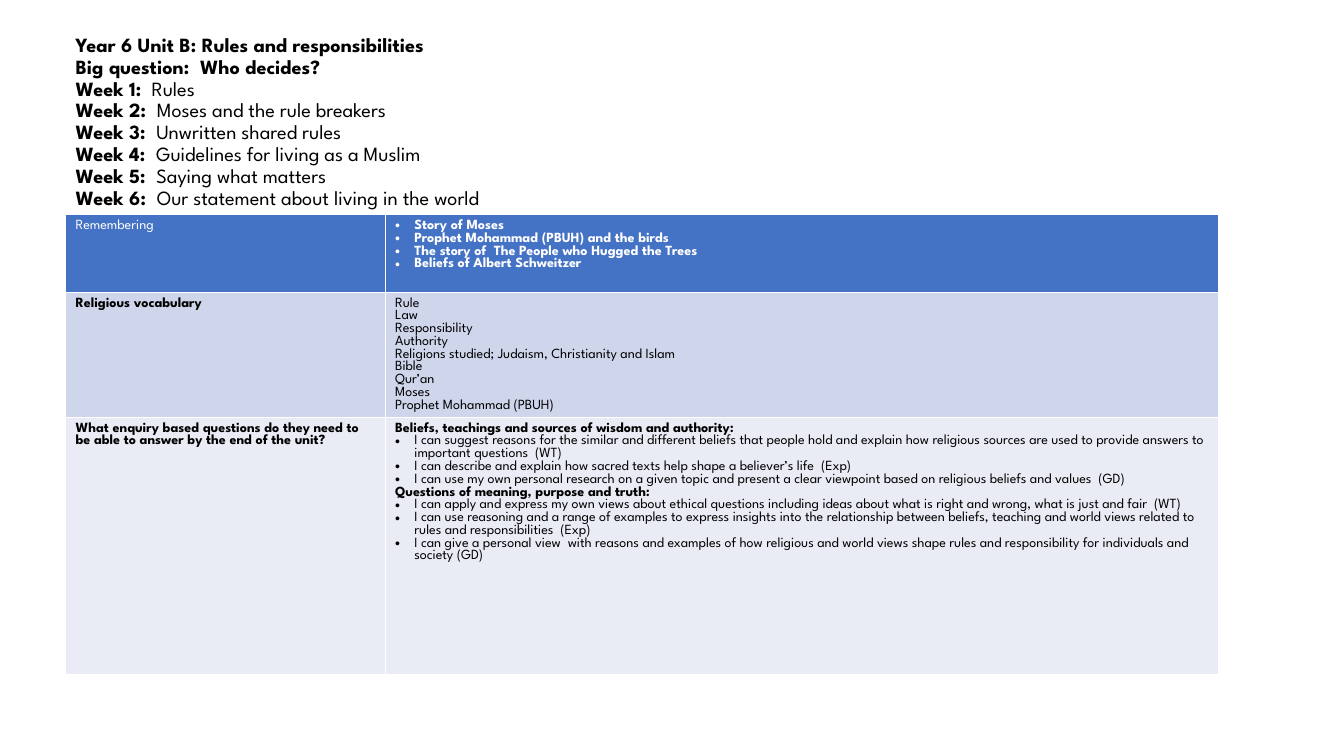
from copy import deepcopy
from lxml import etree
from pptx import Presentation
from pptx.dml.color import RGBColor
from pptx.enum.text import MSO_ANCHOR, MSO_AUTO_SIZE, PP_ALIGN
from pptx.oxml.ns import qn
from pptx.util import Inches, Pt

MIDDLE, LEFT, NO_FIT = MSO_ANCHOR.MIDDLE, PP_ALIGN.LEFT, MSO_AUTO_SIZE.NONE
FONT = "League Spartan"
COLOURS = {"text": "000000", "header_text": "FFFFFF", "header": "4472C4",
           "band": "CFD5EA", "light": "E9EBF5"}

TITLE = [
    ("Year 6 Unit B: Rules and responsibilities", ""),
    ("Big question:  Who decides?", ""),
    ("Week 1: ", " Rules "),
    ("Week 2:  ", "Moses and the rule breakers"),
    ("Week 3:  ", "Unwritten shared rules"),
    ("Week 4:  ", "Guidelines for living as a Muslim"),
    ("Week 5:  ", "Saying what matters"),
    ("Week 6:  ", "Our statement about living in the world"),
]

PLAIN, BOLD, BULLET, BOLD_BULLET = (False, False), (True, False), (False, True), (True, True)
ROWS = [
    ("header", "header_text", 0.77,
     [(PLAIN, ["Remembering"])],
     [(BOLD_BULLET, [
         "Story of Moses",
         "Prophet Mohammad (PBUH) and the birds",
         "The story of  The People who Hugged the Trees",
         "Beliefs of Albert Schweitzer"])]),
    ("band", "text", 0.77,
     [(BOLD, ["Religious vocabulary"])],
     [(PLAIN, [
         "Rule", "Law", "Responsibility", "Authority",
         "Religions studied; Judaism, Christianity and Islam",
         "Bible", "Qur’an", "Moses", "Prophet Mohammad (PBUH)"])]),
    ("light", "text", 2.55,
     [(BOLD, ["What enquiry based questions do they need to be able to answer "
              "by the end of the unit?"])],
     [(BOLD, ["Beliefs, teachings and sources of wisdom and authority:"]),
      (BULLET, [
          "I can suggest reasons for the similar and different beliefs that people hold and "
          "explain how religious sources are used to provide answers to important questions  (WT)",
          "I can describe and explain how sacred texts help shape a believer’s life  (Exp)",
          "I can use my own personal research on a given topic and present a clear viewpoint "
          "based on religious beliefs and values  (GD)"]),
      (BOLD, ["Questions of meaning, purpose and truth:"]),
      (BULLET, [
          "I can apply and express my own views about ethical questions including ideas about "
          "what is right and wrong, what is just and fair  (WT)",
          "I can use reasoning and a range of examples to express insights into the relationship "
          "between beliefs, teaching and world views related to rules and responsibilities  (Exp)",
          "I can give a personal view  with reasons and examples of how religious and world views "
          "shape rules and responsibility for individuals and society (GD)"])]),
]
COLUMNS = [3.17, 8.27]
MARGIN = 0.65
INDENT = Inches(0.19)


def add_run(p, text, size, bold, colour):
    r = p.add_run()
    r.text = text
    r.font.name, r.font.size, r.font.bold = FONT, Pt(size), bold
    r.font.color.rgb = RGBColor.from_string(COLOURS[colour])
    return r


def add_bullet(p):
    pPr = p._p.get_or_add_pPr()
    pPr.set("marL", str(INDENT))
    pPr.set("indent", str(-INDENT))
    etree.SubElement(pPr, qn("a:buFont"), typeface="Arial")
    etree.SubElement(pPr, qn("a:buChar"), char="•")


def fill_cell(cell, groups, fill, colour):
    cell.fill.solid()
    cell.fill.fore_color.rgb = RGBColor.from_string(COLOURS[fill])
    tf = cell.text_frame
    lines = [(style, text) for style, texts in groups for text in texts]
    for i, ((bold, bullet), text) in enumerate(lines):
        p = tf.add_paragraph() if i else tf.paragraphs[0]
        if bullet:
            add_bullet(p)
        add_run(p, text, 10, bold, colour)


def add_title(s):
    title = s.shapes.title
    title.left, title.top = Inches(MARGIN), Inches(0.3)
    title.width, title.height = Inches(11.25), Inches(1.61)
    tf = title.text_frame
    tf.word_wrap, tf.auto_size, tf.vertical_anchor = True, NO_FIT, MIDDLE
    p = tf.paragraphs[0]
    p.alignment, p.line_spacing = LEFT, 0.9
    for label, topic in TITLE:
        p.add_line_break()
        r = add_run(p, label, 14.4, True, "text")
        if topic:
            add_run(p, topic, 14.4, False, "text")
    for br in p._p.findall(qn("a:br")):
        br.append(deepcopy(r._r.rPr))


def add_unit_table(s):
    table = s.shapes.add_table(len(ROWS), len(COLUMNS), Inches(MARGIN), Inches(2.13),
                               Inches(sum(COLUMNS)), Inches(sum(row[2] for row in ROWS))).table
    for column, width in zip(table.columns, COLUMNS):
        column.width = Inches(width)
    for i, (fill, colour, height, *cells) in enumerate(ROWS):
        table.rows[i].height = Inches(height)
        for j, groups in enumerate(cells):
            fill_cell(table.cell(i, j), groups, fill, colour)


def main():
    prs = Presentation()
    prs.slide_width, prs.slide_height = Inches(13.33), Inches(7.5)
    s = prs.slides.add_slide(prs.slide_layouts[5])
    add_title(s)
    add_unit_table(s)
    prs.save("out.pptx")


if __name__ == "__main__":
    main()
